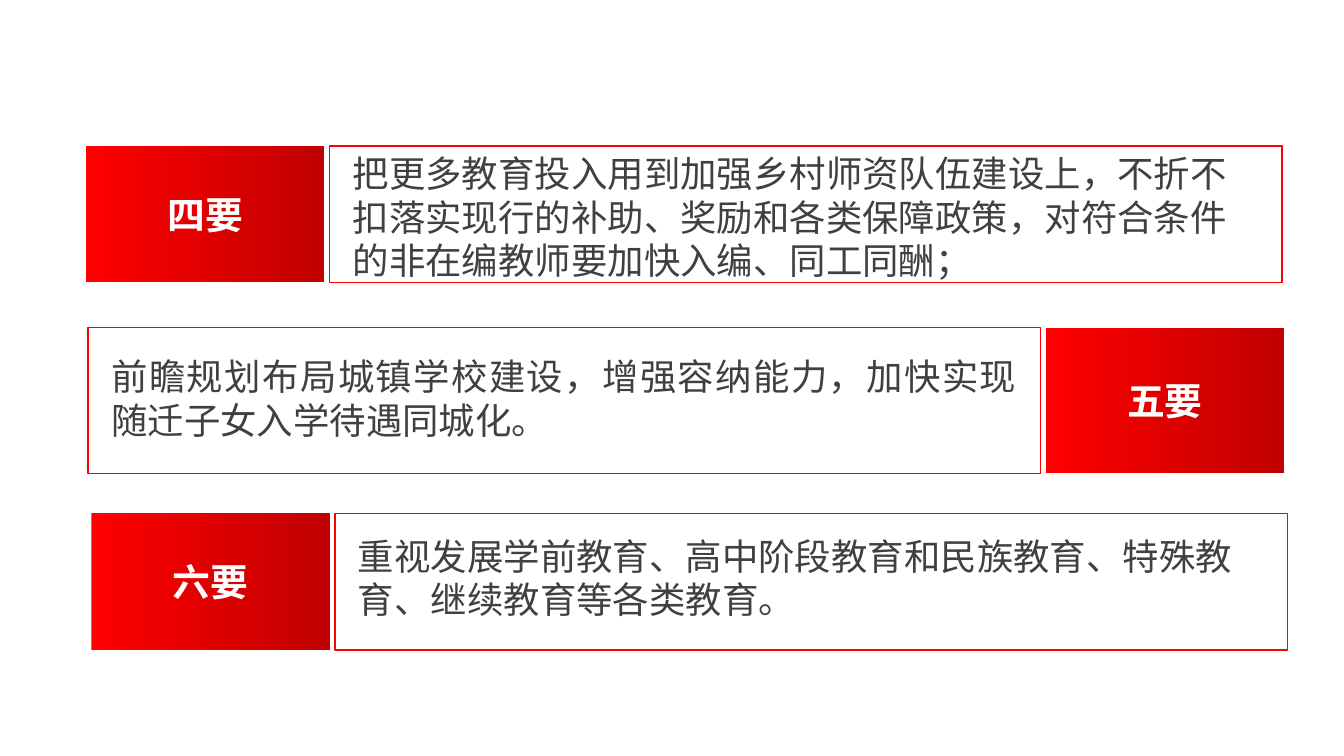
from dataclasses import dataclass

from pptx import Presentation
from pptx.dml.color import RGBColor
from pptx.enum.shapes import MSO_SHAPE
from pptx.enum.text import MSO_ANCHOR, PP_ALIGN
from pptx.oxml.ns import qn
from pptx.util import Pt

SCALE = 9525
LABEL_WIDTH, PANEL_WIDTH, TEXT_WIDTH = 227, 907, 863
GAP, TEXT_INDENT = 5, 22


@dataclass(frozen=True)
class Theme:
    font: str = "Noto Sans CJK SC"
    label_size: int = 27
    body_size: int = 26
    red: str = "FF0000"
    dark_red: str = "C00000"
    white: str = "FFFFFF"
    body_start: str = "404040"
    body_end: str = "262626"


THEME = Theme()

DEMANDS = [
    {
        "label": "四要",
        "body": "把更多教育投入用到加强乡村师资队伍建设上，不折不扣落实现行的补助、奖励和各类保障政策，对符合条件的非在编教师要加快入编、同工同酬；",
        "left": 82, "top": 139, "height": 130, "label_first": True,
        "text_top": 144, "text_height": 125,
        "anchor": MSO_ANCHOR.TOP, "align": PP_ALIGN.LEFT,
    },
    {
        "label": "五要",
        "body": "前瞻规划布局城镇学校建设，增强容纳能力，加快实现随迁子女入学待遇同城化。",
        "left": 84, "top": 312, "height": 139, "label_first": False,
        "text_top": 323, "text_height": 112,
        "anchor": MSO_ANCHOR.MIDDLE, "align": PP_ALIGN.JUSTIFY,
    },
    {
        "label": "六要",
        "body": "重视发展学前教育、高中阶段教育和民族教育、特殊教育、继续教育等各类教育。",
        "left": 87, "top": 489, "height": 130, "label_first": True,
        "text_top": 496, "text_height": 108,
        "anchor": MSO_ANCHOR.MIDDLE, "align": PP_ALIGN.LEFT,
    },
]


def px(*lengths):
    return [length * SCALE for length in lengths]


def set_values(target, values):
    for name, value in values.items():
        setattr(target, name, value)


def set_gradient(fill, colours, angle):
    fill.gradient()
    fill.gradient_angle = angle
    for stop, (position, colour) in zip(fill.gradient_stops, enumerate(colours)):
        stop.position = position
        stop.color.rgb = RGBColor.from_string(colour)


def write(box, text, align, size, bold, frame_values):
    set_values(box.text_frame, {"word_wrap": True, **frame_values})
    para = box.text_frame.paragraphs[0]
    para.alignment = align
    span = para.add_run()
    span.text = text
    set_values(span.font, {"name": THEME.font, "size": Pt(size), "bold": bold})
    east_asian = span.font._element.makeelement(qn("a:ea"), {"typeface": THEME.font})
    span.font._element.append(east_asian)
    return span


def add_rectangle(page, *lengths):
    box = page.shapes.add_shape(MSO_SHAPE.RECTANGLE, *px(*lengths))
    box.shadow.inherit = False
    return box


def add_label(page, text, left, top, height):
    box = add_rectangle(page, left, top, LABEL_WIDTH, height)
    set_gradient(box.fill, (THEME.red, THEME.dark_red), 0)
    box.line.fill.background()
    side, edge = px(12, 7)
    span = write(box, text, PP_ALIGN.CENTER, THEME.label_size, True, {
        "vertical_anchor": MSO_ANCHOR.MIDDLE,
        "margin_left": side, "margin_right": side,
        "margin_top": edge, "margin_bottom": edge,
    })
    span.font.color.rgb = RGBColor.from_string(THEME.white)


def add_panel(page, left, top, height):
    box = add_rectangle(page, left, top, PANEL_WIDTH, height)
    box.fill.background()
    box.line.color.rgb = RGBColor.from_string(THEME.red)
    box.line.width = Pt(1)


def add_body(page, text, left, top, height, anchor, align):
    box = page.shapes.add_textbox(*px(left, top, TEXT_WIDTH, height))
    span = write(box, text, align, THEME.body_size, False, {
        "vertical_anchor": anchor,
        "margin_left": 0, "margin_right": 0, "margin_top": 0, "margin_bottom": 0,
    })
    set_gradient(span.font.fill, (THEME.body_start, THEME.body_end), 315)


def add_demand(page, demand):
    left, top, height = demand["left"], demand["top"], demand["height"]
    if demand["label_first"]:
        label_left, panel_left = left, left + LABEL_WIDTH + GAP
    else:
        label_left, panel_left = left + PANEL_WIDTH + GAP, left
    add_label(page, demand["label"], label_left, top, height)
    add_panel(page, panel_left, top, height)
    add_body(page, demand["body"], panel_left + TEXT_INDENT, demand["text_top"],
             demand["text_height"], demand["anchor"], demand["align"])


def main():
    deck = Presentation()
    deck.slide_width, deck.slide_height = px(1280, 720)
    page = deck.slides.add_slide(deck.slide_layouts[6])
    for demand in DEMANDS:
        add_demand(page, demand)
    deck.save("out.pptx")


if __name__ == "__main__":
    main()
